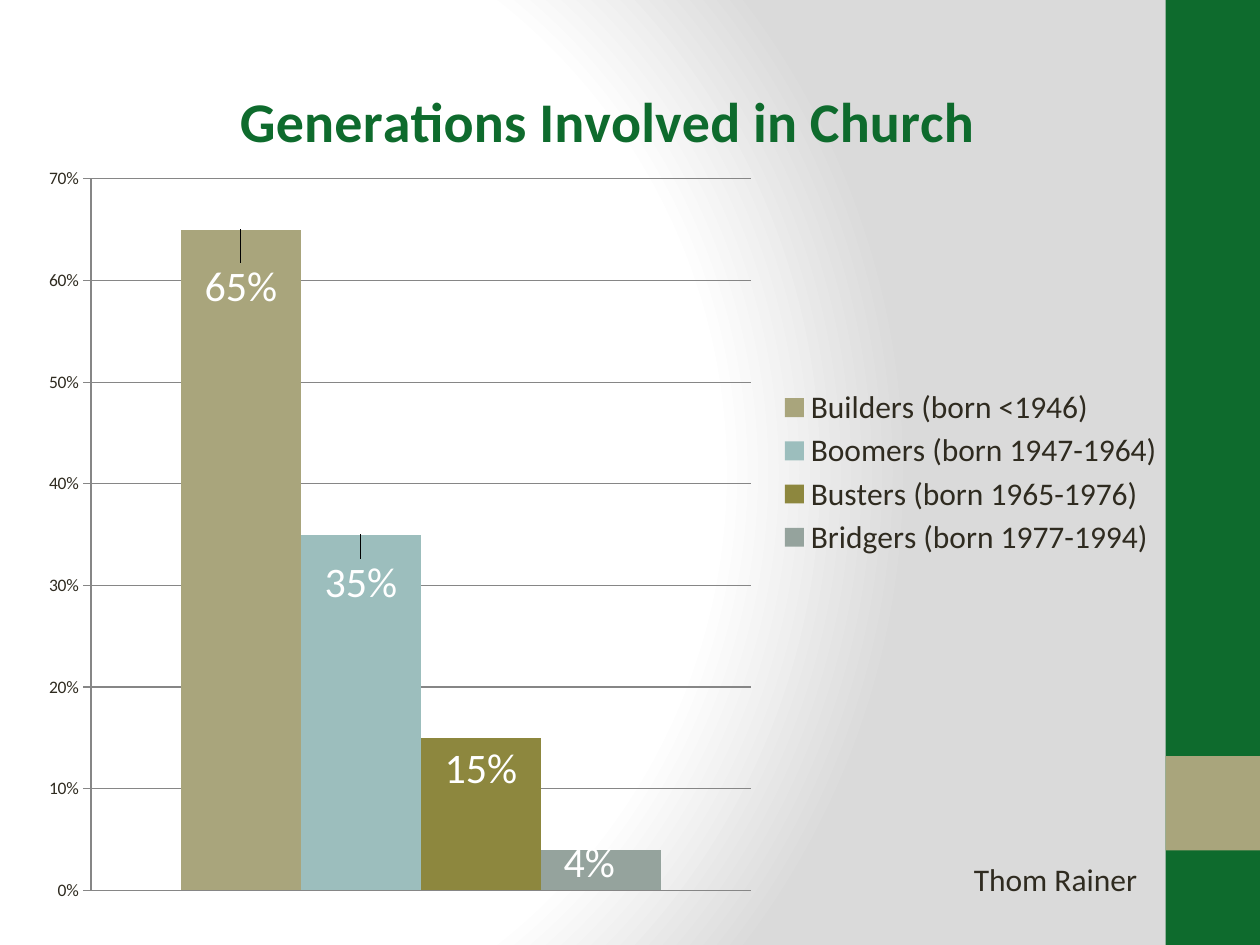
from lxml.etree import SubElement
from pptx import Presentation
from pptx.chart.data import CategoryChartData
from pptx.dml.color import RGBColor
from pptx.enum.chart import XL_CHART_TYPE, XL_LEGEND_POSITION, XL_TICK_MARK
from pptx.enum.shapes import MSO_SHAPE
from pptx.enum.text import MSO_AUTO_SIZE
from pptx.oxml.ns import qn
from pptx.util import Inches, Pt

COLORS = {"green": "0E6B2D", "tan": "A9A57C", "ink": "2F2B20",
          "white": "FFFFFF", "shade": "DADADA", "grid": "868686"}
FONT = "Calibri"
# name, value, colour, label shift as shares of the chart's size
SERIES = [("Builders (born <1946)", 0.65, "A9A57C", {"x": 0, "y": 0.1}),
          ("Boomers (born 1947-1964)", 0.35, "9CBEBD", {"x": 0, "y": 0.09}),
          ("Busters (born 1965-1976)", 0.15, "8D873E", {"x": 0, "y": 0.07}),
          ("Bridgers (born 1977-1994)", 0.04, "95A39D", {"x": -0.01, "y": 0.05})]


def set_font(font, size, color, bold=False):
    font.name, font.size, font.bold = FONT, Pt(size), bold
    font.color.rgb = RGBColor.from_string(color)


def set_layout(el, index, modes, places):
    """Place a chart part by hand; places are shares of the chart's size."""
    for old in el.findall(qn("c:layout")):
        el.remove(old)
    layout = SubElement(el, qn("c:layout"))
    el.insert(index, layout)
    manual = SubElement(layout, qn("c:manualLayout"))
    for tag, val in {**modes, **places}.items():
        SubElement(manual, qn("c:" + tag)).set("val", str(val))


prs = Presentation()
prs.slide_width, prs.slide_height = Inches(10), Inches(7.5)
W, H = prs.slide_width, prs.slide_height
unit = H // 10
s = prs.slides.add_slide(prs.slide_layouts[6])

# Background: circular gradient
s.background.fill.gradient()
grad = s.background.fill._xPr.find(qn("a:gradFill"))
for child in list(grad):
    grad.remove(child)
stops = SubElement(grad, qn("a:gsLst"))
for pos, color in [(0, "white"), (75, "white"), (100, "shade")]:
    stop = SubElement(stops, qn("a:gs"), pos=str(pos * 1000))
    SubElement(stop, qn("a:srgbClr"), val=COLORS[color])
circle = SubElement(grad, qn("a:path"), {"path": "circle"})
SubElement(circle, qn("a:fillToRect"), l="20000", t="50000", r="100000", b="50000")

# Side band and its square
for row, rows, color in [(0, 10, "green"), (8, 1, "tan")]:
    sp = s.shapes.add_shape(MSO_SHAPE.RECTANGLE, W - unit, row * unit, unit, rows * unit)
    sp.shadow.inherit = False
    sp.fill.solid()
    sp.fill.fore_color.rgb = RGBColor.from_string(COLORS[color])
    sp.line.fill.background()

# Chart
data = CategoryChartData(number_format="0%")
data.categories = ["1"]
for name, value, _, _ in SERIES:
    data.add_series(name, [value])
chart = s.shapes.add_chart(XL_CHART_TYPE.COLUMN_CLUSTERED, Inches(0.17), Inches(0.22),
                           Inches(9.19), Inches(7.06), data).chart
set_font(chart.font, 10, COLORS["ink"])
edge = {"xMode": "edge", "yMode": "edge"}

chart.has_title = True
tf = chart.chart_title.text_frame
tf.text = "Generations Involved in Church"
set_font(tf.paragraphs[0].runs[0].font, 32, COLORS["green"], bold=True)
set_layout(chart.chart_title._element, 1, edge, {"x": 0.18, "y": 0.05})

chart.has_legend = True
legend = chart.legend
legend.position = XL_LEGEND_POSITION.RIGHT
legend.include_in_layout = False
set_font(legend.font, 18, COLORS["ink"])
set_layout(legend._element, 1, edge, {"x": 0.65, "y": 0.4, "w": 0.34, "h": 0.2})

chart.category_axis.visible = False
axis = chart.value_axis
axis.minimum_scale, axis.maximum_scale, axis.major_unit = 0, 0.7, 0.1
axis.major_tick_mark = XL_TICK_MARK.OUTSIDE
axis.tick_labels.number_format = "0%"
axis.tick_labels.number_format_is_linked = False
for line in (axis.format.line, axis.major_gridlines.format.line):
    line.color.rgb = RGBColor.from_string(COLORS["grid"])
    line.width = Pt(0.75)

plot = chart.plots[0]
plot.vary_by_categories = False
plot.gap_width, plot.overlap = 150, 0
set_layout(plot._element.getparent(), 0, {"layoutTarget": "inner", **edge},
           {"x": 0.06, "y": 0.17, "w": 0.57, "h": 0.8})
for series, (_, _, color, shift) in zip(plot.series, SERIES):
    series.format.fill.solid()
    series.format.fill.fore_color.rgb = RGBColor.from_string(color)
    labels = series.data_labels
    labels.show_value = True
    labels.number_format, labels.number_format_is_linked = "0%", False
    set_font(labels.font, 24, COLORS["white"])
    set_font(series.points[0].data_label.font, 24, COLORS["white"])
    set_layout(labels._element.find(qn("c:dLbl")), 1, {}, shift)

# Credit
tf = s.shapes.add_textbox(Inches(7.63), Inches(6.78), Inches(1.72), Inches(0.4)).text_frame
tf.word_wrap = False
tf.auto_size = MSO_AUTO_SIZE.SHAPE_TO_FIT_TEXT
tf.text = "Thom Rainer"
set_font(tf.paragraphs[0].runs[0].font, 18, COLORS["ink"])

prs.save("out.pptx")
